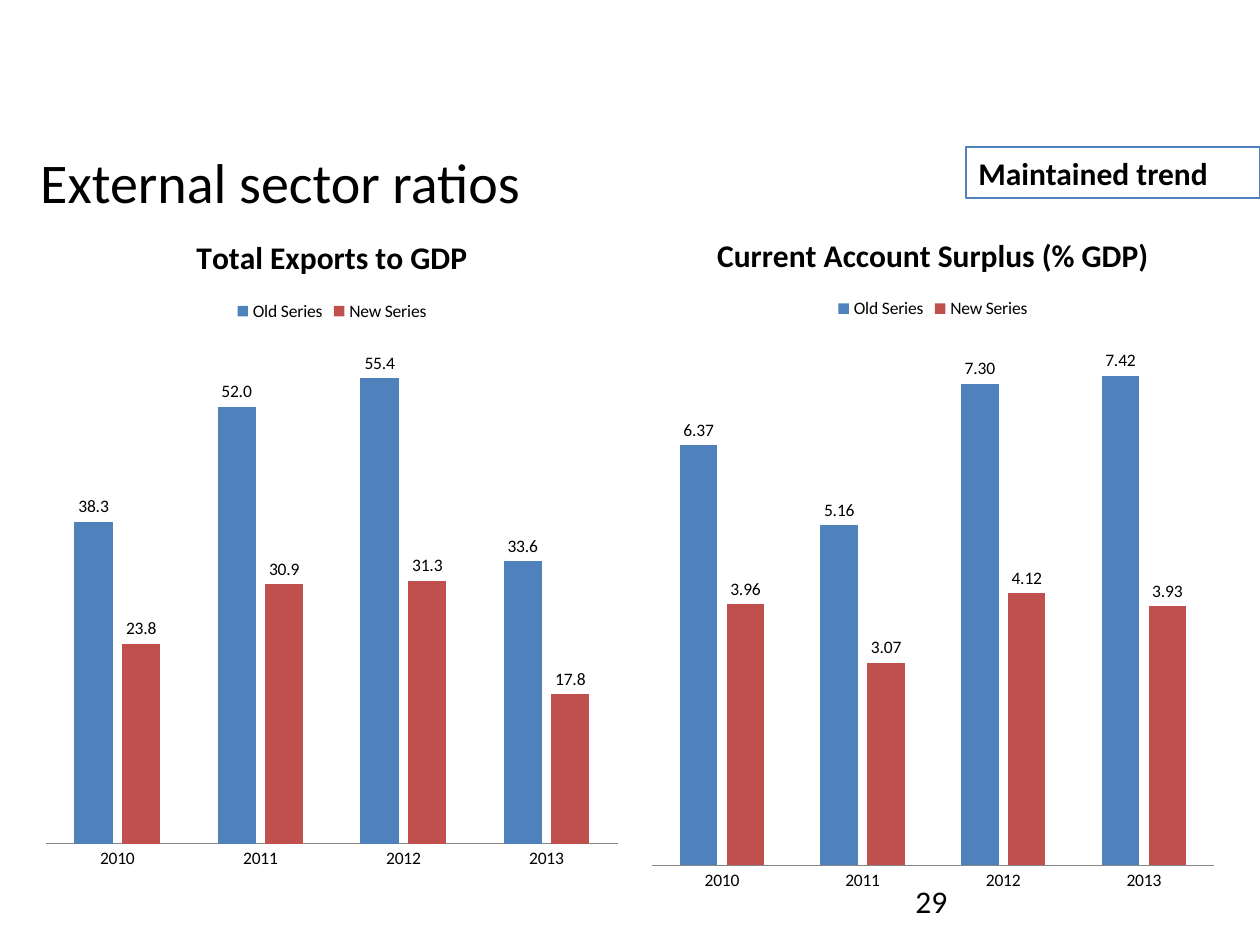
import pptx
import pptx.util
import pptx.chart.data
import pptx.dml.color
import pptx.enum.chart
import pptx.enum.shapes
import pptx.enum.text

PX = 914400 // 126
ALIGN = pptx.enum.text.PP_ALIGN
THEME = {
    "font": "Calibri", "text": "000000", "axis": "868686", "outline": "4F81BD",
    "series": ("4F81BD", "C0504D"),
    "title": 32, "label": 18, "chart": 10,
}
YEARS = ("2010", "2011", "2012", "2013")
CHARTS = [
    {"title": "Current Account Surplus (% GDP)", "place": (640, 207, 586, 697), "format": "0.00",
     "series": {"Old Series": (6.37, 5.16, 7.30, 7.42), "New Series": (3.96, 3.07, 4.12, 3.93)}},
    {"title": "Total Exports to GDP", "place": (34, 210, 596, 672), "format": "0.0",
     "series": {"Old Series": (38.3, 52.0, 55.4, 33.6), "New Series": (23.8, 30.9, 31.3, 17.8)}},
]
PAGE_NUMBER = ("29", (903, 876, 294, 50))
HEADING = ("External sector ratios", (0, 134, 533, 94))
CALLOUT = ("Maintained trend", (966, 147, 294, 51))


def emu(place):
    return [pptx.util.Emu(value * PX) for value in place]


def color(name):
    return pptx.dml.color.RGBColor.from_string(name)


def style(font, size, bold=False):
    font.name = THEME["font"]
    font.size = pptx.util.Pt(size)
    font.bold = bold
    font.color.rgb = color(THEME["text"])


def add_text(page, content, size, align=ALIGN.LEFT, bold=False, outlined=False):
    text, place = content
    box = page.shapes.add_shape(pptx.enum.shapes.MSO_SHAPE.RECTANGLE, *emu(place))
    box.shadow.inherit = False
    box.fill.background()
    if outlined:
        box.line.color.rgb = color(THEME["outline"])
        box.line.width = pptx.util.Pt(0.75)
    else:
        box.line.fill.background()
    frame = box.text_frame
    frame.word_wrap = True
    frame.vertical_anchor = pptx.enum.text.MSO_ANCHOR.MIDDLE
    para = frame.paragraphs[0]
    para.text = text
    para.alignment = align
    style(para.font, size, bold)


def add_chart(page, content):
    data = pptx.chart.data.CategoryChartData(number_format=content["format"])
    data.categories = YEARS
    for name, values in content["series"].items():
        data.add_series(name, values)
    kind = pptx.enum.chart.XL_CHART_TYPE.COLUMN_CLUSTERED
    chart = page.shapes.add_chart(kind, *emu(content["place"]), data).chart
    style(chart.font, THEME["chart"])

    chart.has_title = True
    para = chart.chart_title.text_frame.paragraphs[0]
    para.text = content["title"]
    style(para.font, THEME["label"], True)
    chart.chart_title.include_in_layout = False

    chart.has_legend = True
    chart.legend.position = pptx.enum.chart.XL_LEGEND_POSITION.TOP
    chart.legend.include_in_layout = False

    chart.value_axis.visible = False
    chart.value_axis.has_major_gridlines = False
    chart.value_axis.minimum_scale = 0
    chart.category_axis.major_tick_mark = pptx.enum.chart.XL_TICK_MARK.NONE
    chart.category_axis.format.line.color.rgb = color(THEME["axis"])

    plot = chart.plots[0]
    plot.gap_width = 150
    plot.overlap = -25
    plot.vary_by_categories = False
    plot.has_data_labels = True
    labels = plot.data_labels
    labels.show_value = True
    labels.number_format = content["format"]
    labels.number_format_is_linked = False
    labels.position = pptx.enum.chart.XL_LABEL_POSITION.OUTSIDE_END
    style(labels.font, THEME["chart"])
    for series, fill in zip(plot.series, THEME["series"]):
        series.invert_if_negative = False
        series.format.fill.solid()
        series.format.fill.fore_color.rgb = color(fill)


def main():
    deck = pptx.Presentation()
    deck.slide_width, deck.slide_height = emu((1260, 945))
    page = deck.slides.add_slide(deck.slide_layouts[6])
    add_text(page, PAGE_NUMBER, THEME["label"])
    for content in CHARTS:
        add_chart(page, content)
    add_text(page, HEADING, THEME["title"], align=ALIGN.RIGHT)
    add_text(page, CALLOUT, THEME["label"], bold=True, outlined=True)
    deck.save("out.pptx")


if __name__ == "__main__":
    main()
